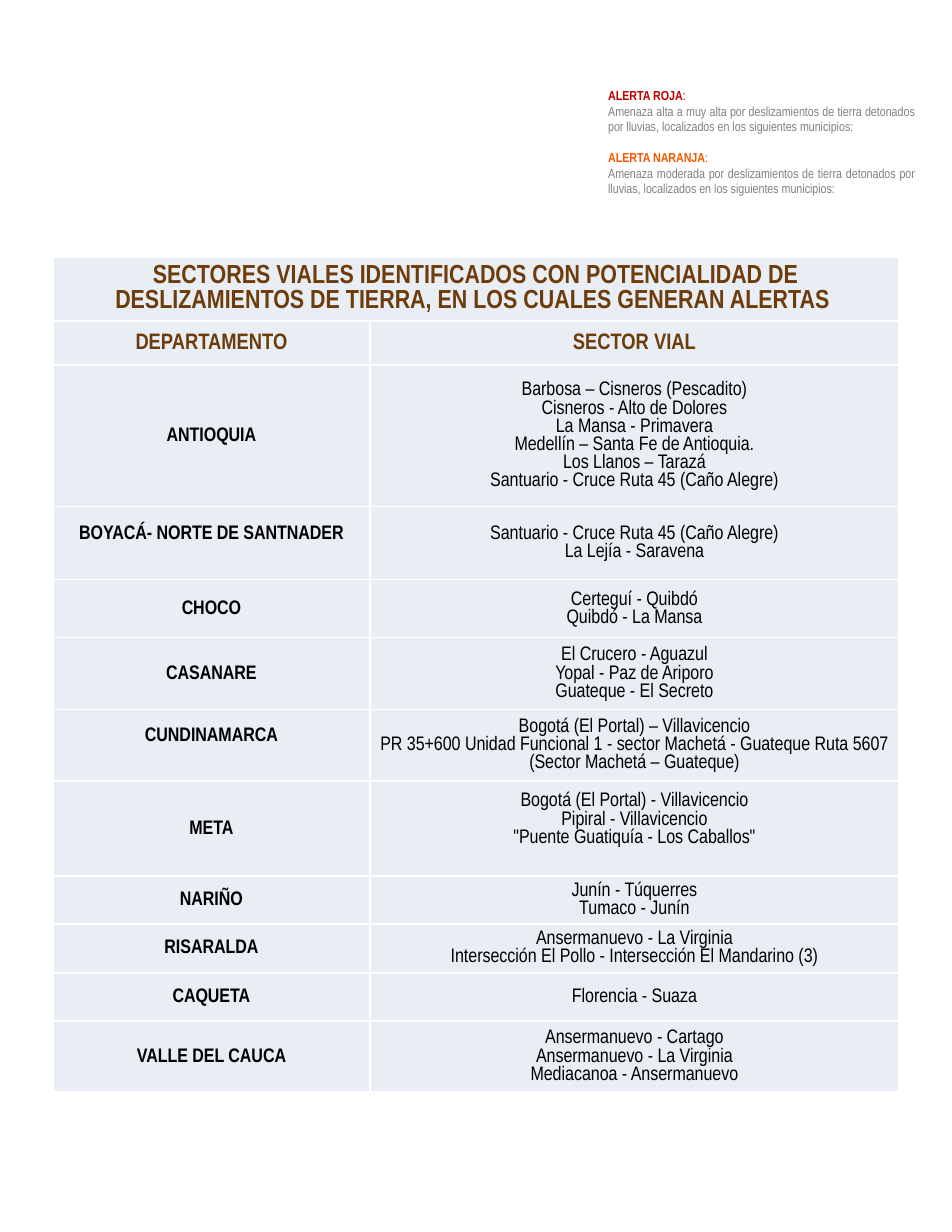
from pptx import Presentation
from pptx.dml.color import RGBColor
from pptx.enum.text import MSO_ANCHOR, MSO_AUTO_SIZE, PP_ALIGN
from pptx.oxml import parse_xml
from pptx.oxml.ns import nsdecls
from pptx.util import Pt

SCALE = 914400 / 134.3
FONT = "Arial Narrow"
HUES = {
    "red": "C00000", "orange": "F65800", "gray": "808080",
    "brown": "6E3C0A", "black": "000000", "pale": "E9EDF4", "white": "FFFFFF",
}
ALERTS = [
    ("ALERTA ROJA", "red", "Amenaza alta a muy alta por deslizamientos de tierra "
     "detonados por lluvias, localizados en los siguientes municipios:"),
    ("ALERTA NARANJA", "orange", "Amenaza moderada por deslizamientos de tierra "
     "detonados por lluvias, localizados en los siguientes municipios:"),
]
TITLE = ["SECTORES VIALES IDENTIFICADOS CON POTENCIALIDAD DE",
         "DESLIZAMIENTOS DE TIERRA, EN LOS CUALES GENERAN ALERTAS "]
HEADS = ["DEPARTAMENTO", "SECTOR VIAL"]
ROADS = [
    (142, "ANTIOQUIA", [
        "Barbosa – Cisneros (Pescadito)", "Cisneros - Alto de Dolores",
        "La Mansa - Primavera", "Medellín – Santa Fe de Antioquia.",
        "Los Llanos – Tarazá", "Santuario - Cruce Ruta 45 (Caño Alegre)"]),
    (73, "BOYACÁ- NORTE DE SANTNADER", [
        "Santuario - Cruce Ruta 45 (Caño Alegre)", "La Lejía - Saravena"]),
    (58, "CHOCO", ["Certeguí - Quibdó", "Quibdó - La Mansa"]),
    (72, "CASANARE", [
        "El Crucero - Aguazul", "Yopal - Paz de Ariporo", "Guateque - El Secreto"]),
    (71, "CUNDINAMARCA", [
        "Bogotá (El Portal) – Villavicencio",
        "PR 35+600 Unidad Funcional 1 - sector Machetá - Guateque Ruta 5607",
        "(Sector Machetá – Guateque)"]),
    (95, "META", [
        "Bogotá (El Portal) - Villavicencio", "Pipiral - Villavicencio",
        '"Puente Guatiquía - Los Caballos"']),
    (48, "NARIÑO", ["Junín - Túquerres", "Tumaco - Junín"]),
    (49, "RISARALDA", [
        "Ansermanuevo - La Virginia",
        "Intersección El Pollo - Intersección El Mandarino (3)"]),
    (48, "CAQUETA", ["Florencia - Suaza"]),
    (71, "VALLE DEL CAUCA", [
        "Ansermanuevo - Cartago", "Ansermanuevo - La Virginia",
        "Mediacanoa - Ansermanuevo"]),
]
RAISED = {"BOYACÁ- NORTE DE SANTNADER", "CUNDINAMARCA",
          '"Puente Guatiquía - Los Caballos"'}


def px(num):
    return round(num * SCALE)


def write(par, text, size=10.5, hue="black", bold=False):
    run = par.add_run()
    run.text = text
    font = run.font
    font.name = FONT
    font.size = Pt(size)
    font.bold = bold
    font.color.rgb = RGBColor.from_string(HUES[hue])


def next_par(frame):
    first = frame.paragraphs[0]
    return frame.add_paragraph() if first.runs else first


def edge(cell):
    props = cell._tc.get_or_add_tcPr()
    for side in "LRTB":
        props.append(parse_xml(
            f'<a:ln{side} {nsdecls("a")} w="12700"><a:solidFill>'
            f'<a:srgbClr val="{HUES["white"]}"/></a:solidFill></a:ln{side}>'))


def fill_cell(cell, lines, **form):
    edge(cell)
    cell.fill.solid()
    cell.fill.fore_color.rgb = RGBColor.from_string(HUES["pale"])
    cell.vertical_anchor = MSO_ANCHOR.MIDDLE
    cell.margin_left = cell.margin_right = cell.margin_top = px(1)
    cell.margin_bottom = px(18 if lines[-1] in RAISED else 0)
    for line in lines:
        par = next_par(cell.text_frame)
        par.alignment = PP_ALIGN.CENTER
        write(par, line, **form)


def add_alerts(slide):
    box = slide.shapes.add_textbox(px(595), px(81), px(333), px(125))
    frame = box.text_frame
    frame.word_wrap = True
    frame.auto_size = MSO_AUTO_SIZE.SHAPE_TO_FIT_TEXT
    for rank, (name, hue, note) in enumerate(ALERTS):
        par = next_par(frame)
        if rank:
            par.space_before = Pt(8)
        write(par, name, size=7, hue=hue, bold=True)
        write(par, ":", size=7, hue=hue)
        par = next_par(frame)
        par.alignment = PP_ALIGN.JUSTIFY
        write(par, note, size=7, hue="gray")


def add_roads(slide):
    highs = [63, 44] + [high for high, _, _ in ROADS]
    wides = [317, 529]
    table = slide.shapes.add_table(
        len(highs), len(wides), px(53), px(257), px(sum(wides)), px(sum(highs))).table
    table.first_row = table.horz_banding = False
    for col, wide in zip(table.columns, wides):
        col.width = px(wide)
    for row, high in zip(table.rows, highs):
        row.height = px(high)
    table.cell(0, 0).merge(table.cell(0, 1))
    fill_cell(table.cell(0, 0), TITLE, size=14, hue="brown", bold=True)
    for col, head in enumerate(HEADS):
        fill_cell(table.cell(1, col), [head], size=12, hue="brown", bold=True)
    for row, (_, name, roads) in enumerate(ROADS, 2):
        fill_cell(table.cell(row, 0), [name], bold=True)
        fill_cell(table.cell(row, 1), roads)


def main():
    deck = Presentation()
    deck.slide_width, deck.slide_height = px(952), px(1232)
    slide = deck.slides.add_slide(deck.slide_layouts[6])
    add_alerts(slide)
    add_roads(slide)
    deck.save("out.pptx")


if __name__ == "__main__":
    main()
